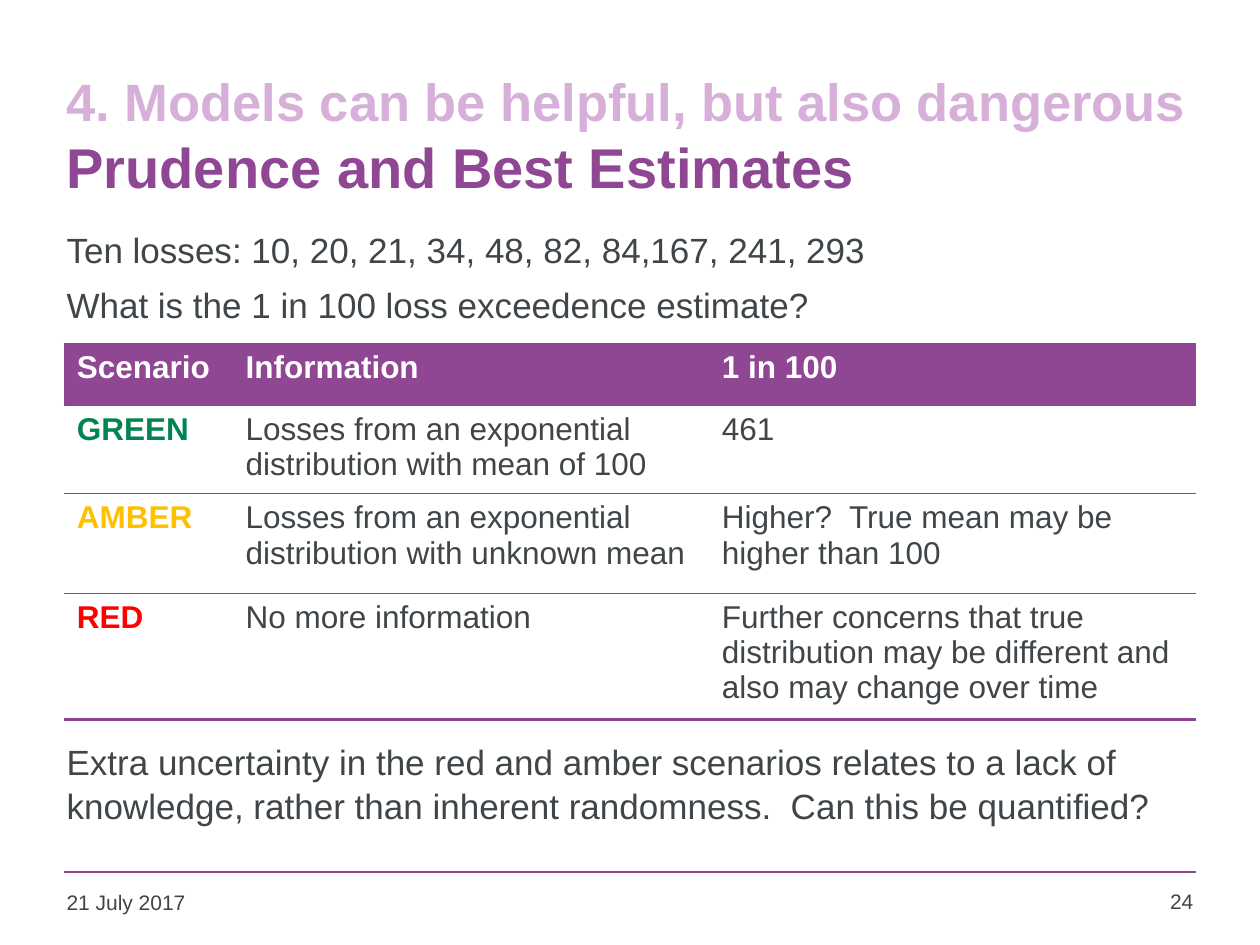
import pptx
import pptx.util
import pptx.dml.color
import pptx.enum.shapes
import pptx.enum.text
import pptx.oxml.ns
import lxml.etree

Inches = pptx.util.Inches
Pt = pptx.util.Pt
RGB = pptx.dml.color.RGBColor
Align = pptx.enum.text.PP_ALIGN
Anchor = pptx.enum.text.MSO_ANCHOR
qn = pptx.oxml.ns.qn

PURPLE = RGB(0x8F, 0x46, 0x93)
EDGE = RGB(0x8E, 0x43, 0x92)
LILAC = RGB(0xD7, 0xB0, 0xD9)
INK = RGB(0x3F, 0x45, 0x48)
WHITE = RGB(0xFF, 0xFF, 0xFF)
GREEN = RGB(0x00, 0x84, 0x52)
AMBER = RGB(0xFF, 0xC0, 0x00)
RED = RGB(0xFF, 0x00, 0x00)

COLS = [1.34, 3.78, 3.86]
ROWS = [0.49, 0.66, 0.79, 0.94]
HEAD = ["Scenario", "Information", "1 in 100"]
CASES = [
    (GREEN, ["GREEN", "Losses from an exponential distribution with mean of 100", "461"]),
    (AMBER, ["AMBER", "Losses from an exponential distribution with unknown mean",
             "Higher?  True mean may be higher than 100"]),
    (RED, ["RED", "No more information",
           "Further concerns that true distribution may be different and "
           "also may change over time"]),
]
# Line width in points under each row
RULES = [0.75, 0.75, 0.75, 1.5]


def write(para, text, size=20, color=INK, bold=False, align=Align.LEFT, before=0, pitch=1.0):
    """Add a formatted run to a paragraph."""
    para.alignment = align
    para.space_before = Pt(before)
    para.line_spacing = pitch
    run = para.add_run()
    run.text = text
    font = run.font
    font.name = "Arial"
    font.size = Pt(size)
    font.bold = bold
    font.color.rgb = color


def add_box(slide, left, top, width, height, anchor=Anchor.TOP):
    box = slide.shapes.add_textbox(Inches(left), Inches(top), Inches(width), Inches(height))
    frame = box.text_frame
    frame.word_wrap = True
    frame.vertical_anchor = anchor
    return frame


def add_title(slide):
    para = add_box(slide, 0.43, 0.44, 9.14, 1.25, Anchor.MIDDLE).paragraphs[0]
    write(para, "4. Models can be helpful, but also dangerous", size=30, color=LILAC, bold=True)
    para.add_line_break()
    write(para, "Prudence and Best Estimates", size=32, color=PURPLE, bold=True)


def add_body(slide):
    """Place the text above and below the table in one frame."""
    frame = add_box(slide, 0.43, 1.75, 9.07, 5.07)
    write(frame.paragraphs[0], "Ten losses: 10, 20, 21, 34, 48, 82, 84,167, 241, 293", pitch=1.05)
    write(frame.add_paragraph(), "What is the 1 in 100 loss exceedence estimate?",
          before=6, pitch=1.05)
    write(frame.add_paragraph(),
          "Extra uncertainty in the red and amber scenarios relates to a lack of knowledge, "
          "rather than inherent randomness.  Can this be quantified?",
          before=236, pitch=1.05)


def set_edge(cell, side, width, color):
    """Draw one cell border, or hide it when the width is 0."""
    props = cell._tc.get_or_add_tcPr()
    line = lxml.etree.Element(qn("a:ln" + side), w=str(int(Pt(width))))
    if width:
        fill = lxml.etree.SubElement(line, qn("a:solidFill"))
        lxml.etree.SubElement(fill, qn("a:srgbClr"), val=str(color))
    else:
        lxml.etree.SubElement(line, qn("a:noFill"))
    props.append(line)


def set_cell(cell, text, row, col, **style):
    write(cell.text_frame.paragraphs[0], text, size=18, **style)
    head = row == 0
    edges = {
        "L": 0.75 if head and col == 0 else 0,
        "R": 0.75 if head and col == len(COLS) - 1 else 0,
        "T": 0.75 if head else RULES[row - 1],
        "B": RULES[row],
    }
    for side, width in edges.items():
        set_edge(cell, side, width, EDGE)
    if head:
        cell.fill.solid()
        cell.fill.fore_color.rgb = PURPLE
    else:
        cell.fill.background()


def add_grid(slide):
    table = slide.shapes.add_table(len(ROWS), len(COLS), Inches(0.51), Inches(2.73),
                                   Inches(sum(COLS)), Inches(sum(ROWS))).table
    table.horz_banding = False
    for col, width in zip(table.columns, COLS):
        col.width = Inches(width)
    for row, height in zip(table.rows, ROWS):
        row.height = Inches(height)
    for col, text in enumerate(HEAD):
        set_cell(table.cell(0, col), text, 0, col, color=WHITE, bold=True)
    for row, (color, texts) in enumerate(CASES, 1):
        for col, text in enumerate(texts):
            first = col == 0
            set_cell(table.cell(row, col), text, row, col,
                     color=color if first else INK, bold=first)


def add_foot(slide):
    line = slide.shapes.add_connector(pptx.enum.shapes.MSO_CONNECTOR.STRAIGHT, Inches(0.51),
                                      Inches(6.92), Inches(9.49), Inches(6.92))
    line.line.color.rgb = PURPLE
    line.line.width = Pt(1)
    lxml.etree.SubElement(line._element.spPr, qn("a:effectLst"))
    write(add_box(slide, 0.43, 7.01, 2.2, 0.36).paragraphs[0], "21 July 2017", size=12)
    write(add_box(slide, 8.86, 7, 0.71, 0.37).paragraphs[0], "24", size=12, align=Align.RIGHT)


def main():
    deck = pptx.Presentation()
    deck.slide_width = Inches(10)
    deck.slide_height = Inches(7.5)
    slide = deck.slides.add_slide(deck.slide_layouts[6])
    add_title(slide)
    add_body(slide)
    add_grid(slide)
    add_foot(slide)
    deck.save("out.pptx")


if __name__ == "__main__":
    main()
